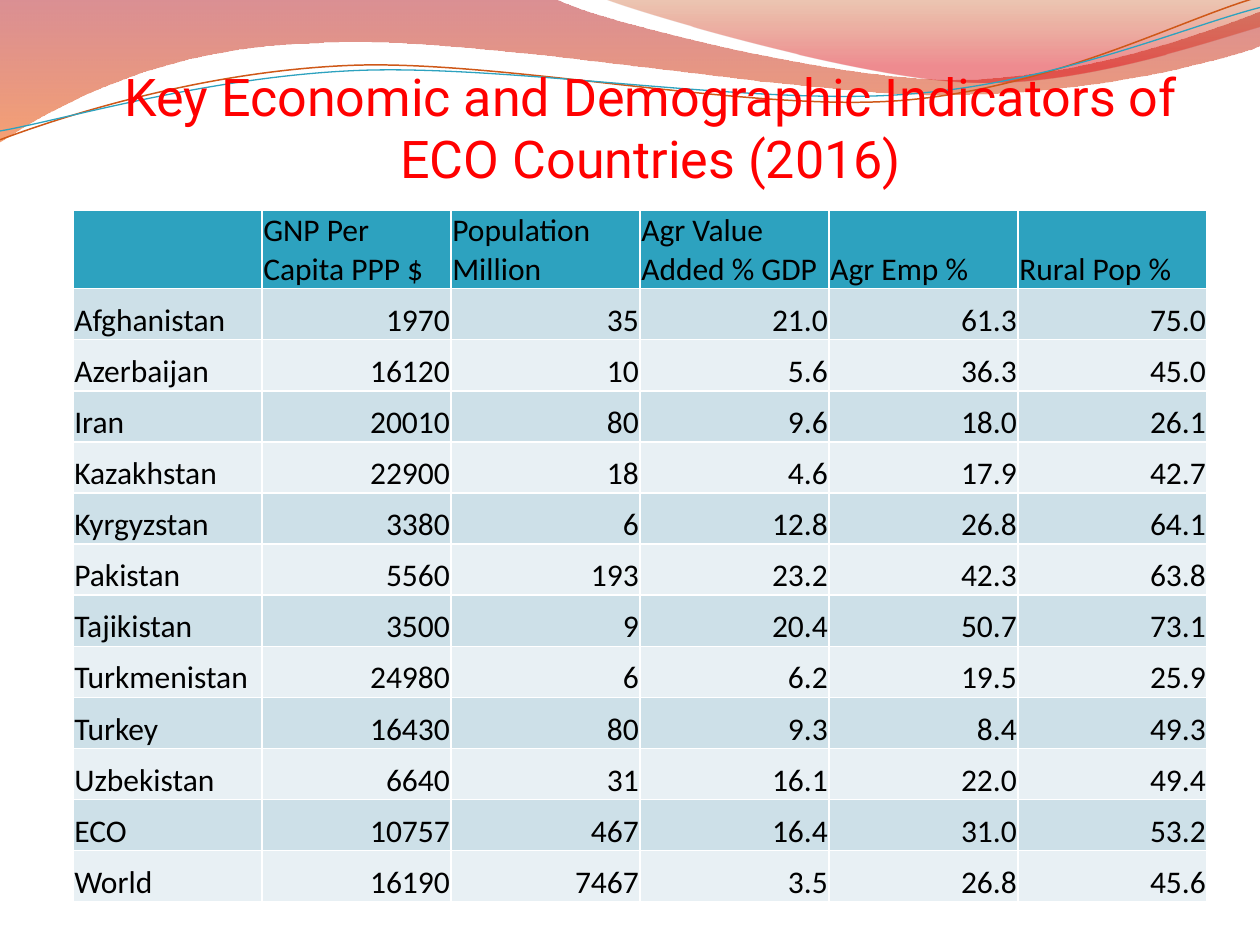
from dataclasses import dataclass
from math import cos, radians, sin
from lxml.etree import SubElement as Sub
from pptx import Presentation
from pptx.dml.color import RGBColor as Rgb
from pptx.enum.text import MSO_ANCHOR as Anchor, MSO_AUTO_SIZE as Fit, PP_ALIGN as Align
from pptx.oxml.ns import qn
from pptx.util import Inches, Pt


@dataclass(frozen=True)
class Theme:
    red: str = "FF0000"
    ink: str = "000000"
    teal: str = "2DA2BF"
    rust: str = "CF5818"
    bands: tuple = ("CDE0E8", "E8F0F4")
    head: str = "Roboto"
    body: str = "Calibri"
    big: float = 29.7
    small: float = 18


THEME = Theme()
WIDE, HIGH = 10, 7.5
TILT = 2.7
TITLE = "Key Economic and Demographic Indicators of ECO Countries (2016)"
HEADS = ("", "GNP Per Capita PPP $", "Population\vMillion",
         "Agr Value Added % GDP", "Agr Emp %", "Rural Pop %")
ROWS = (
    ("Afghanistan", "1970", "35", "21.0", "61.3", "75.0"),
    ("Azerbaijan", "16120", "10", "5.6", "36.3", "45.0"),
    ("Iran", "20010", "80", "9.6", "18.0", "26.1"),
    ("Kazakhstan", "22900", "18", "4.6", "17.9", "42.7"),
    ("Kyrgyzstan", "3380", "6", "12.8", "26.8", "64.1"),
    ("Pakistan", "5560", "193", "23.2", "42.3", "63.8"),
    ("Tajikistan", "3500", "9", "20.4", "50.7", "73.1"),
    ("Turkmenistan", "24980", "6", "6.2", "19.5", "25.9"),
    ("Turkey", "16430", "80", "9.3", "8.4", "49.3"),
    ("Uzbekistan", "6640", "31", "16.1", "22.0", "49.4"),
    ("ECO", "10757", "467", "16.4", "31.0", "53.2"),
    ("World", "16190", "7467", "3.5", "26.8", "45.6"),
)

BANDS = (
    (((0, 0), (4.4, -0.01), (4.76, 0.17, 6.64, 0.63, 7.58, 0.63),
      (8.53, 0.63, 9.58, 0.26, 10, 0.09), (10.01, 0.36),
      (9.83, 0.44, 8.7, 0.76, 7.46, 0.75), (6.22, 0.75, 3.82, 0.28, 2.57, 0.34),
      (1.29, 0.36, 0.46, 0.83, -0.01, 1.13), (0, 0)),
     ((0, "AF0911", 45), (1, "EE5300", 55))),
    (((4.79, -0.01), (5.09, 0.11, 6.82, 0.62, 7.69, 0.65),
      (8.56, 0.69, 9.61, 0.32, 10, 0.21), (10, 0), (4.79, -0.01)),
     ((0, "C24400", 30), (0.8, "DC000B", 45))),
)
LINES = (
    (((0, 1.11), (0.48, 0.93, 1.58, 0.57, 2.77, 0.52),
      (3.95, 0.47, 5.93, 0.89, 7.13, 0.8), (8.33, 0.71, 9.38, 0.15, 9.98, -0.02)),
     THEME.rust, 0.85),
    (((0, 1.04), (0.47, 0.96, 1.64, 0.61, 2.83, 0.56),
      (4.03, 0.51, 5.97, 0.84, 7.17, 0.75), (8.36, 0.67, 9.41, 0.21, 10, 0.06)),
     THEME.teal, 0.75),
)


def pairs(leg):
    return list(zip(leg[::2], leg[1::2]))


def turn(route, angle, mid):
    c, s = cos(radians(angle)), sin(radians(angle))
    for leg in route:
        spots = [(x - mid[0], y - mid[1]) for x, y in pairs(leg)]
        yield tuple(v for x, y in spots
                    for v in (mid[0] + x * c - y * s, mid[1] + x * s + y * c))


def trace(slide, route, close):
    legs = [[(Inches(x), Inches(y)) for x, y in pairs(leg)] for leg in route]
    pen = slide.shapes.build_freeform(*legs[0][0])
    pen.add_line_segments([leg[-1] for leg in legs[1:]], close=close)
    shape = pen.convert_to_shape()
    shape.shadow.inherit = False
    nodes = list(shape._element.spPr.iter(qn("a:lnTo")))
    for node, leg in zip(nodes, legs[1:]):
        if len(leg) == 3:
            node.tag = qn("a:cubicBezTo")
            node.remove(node[0])
            for x, y in leg:
                dot = Sub(node, qn("a:pt"))
                dot.set("x", str(x - shape.left))
                dot.set("y", str(y - shape.top))
    return shape


def add_band(slide, route, stops):
    shape = trace(slide, route, True)
    shape.line.fill.background()
    shape.fill.gradient()
    shape.fill.gradient_angle = 270
    for stop, (place, tint, _) in zip(shape.fill.gradient_stops, stops):
        stop.position = place
        stop.color.rgb = Rgb.from_string(tint)
    tints = shape._element.spPr.iter(qn("a:srgbClr"))
    for node, (_, _, alpha) in zip(tints, stops):
        Sub(node, qn("a:alpha")).set("val", str(alpha * 1000))


def add_line(slide, route, tint, width):
    shape = trace(slide, list(turn(route, TILT, (WIDE / 2, 0.58))), False)
    shape.rotation = 360 - TILT
    shape.fill.background()
    shape.line.color.rgb = Rgb.from_string(tint)
    shape.line.width = Pt(width)


def add_run(para, text, face, size, tint):
    run = para.add_run()
    run.text = text
    font = run.font
    font.name, font.size, font.bold = face, Pt(size), False
    font.color.rgb = Rgb.from_string(tint)


def set_title(slide):
    title = slide.shapes.title
    title.left, title.top = Inches(WIDE / 15), 0
    title.width, title.height = Inches(WIDE * 0.9), Inches(HIGH / 5)
    frame = title.text_frame
    frame.word_wrap, frame.auto_size = True, Fit.NONE
    frame.vertical_anchor = Anchor.BOTTOM
    frame.margin_left = frame.margin_right = frame.margin_bottom = 0
    para = frame.paragraphs[0]
    para.alignment = Align.CENTER
    add_run(para, TITLE, THEME.head, THEME.big, THEME.red)
    slide.shapes._spTree.append(title._element)


def fill_cell(cell, text, row, col):
    cell.fill.solid()
    tint = THEME.bands[(row - 1) % 2] if row else THEME.teal
    cell.fill.fore_color.rgb = Rgb.from_string(tint)
    cell.vertical_anchor = Anchor.BOTTOM
    cell.margin_left = cell.margin_right = cell.margin_top = Inches(0.01)
    cell.margin_bottom = 0
    para = cell.text_frame.paragraphs[0]
    para.alignment = Align.RIGHT if row and col else Align.LEFT
    for spot, part in enumerate(text.split("\v") if text else ()):
        if spot:
            para.add_line_break()
        add_run(para, part, THEME.body, THEME.small, THEME.ink)


def add_grid(slide):
    data = (HEADS,) + ROWS
    top, tall, head = 1.67, 5.48, 0.61
    frame = slide.shapes.add_table(len(data), len(HEADS), Inches(0.58), Inches(top),
                                   Inches(WIDE * 0.9), Inches(tall))
    table = frame.table
    for row, texts in enumerate(data):
        table.rows[row].height = Inches((tall - head) / len(ROWS) if row else head)
        for col, text in enumerate(texts):
            fill_cell(table.cell(row, col), text, row, col)


def main():
    deck = Presentation()
    deck.slide_width, deck.slide_height = Inches(WIDE), Inches(HIGH)
    slide = deck.slides.add_slide(deck.slide_layouts[5])
    for band in BANDS:
        add_band(slide, *band)
    for line in LINES:
        add_line(slide, *line)
    set_title(slide)
    add_grid(slide)
    deck.save("out.pptx")


if __name__ == "__main__":
    main()
